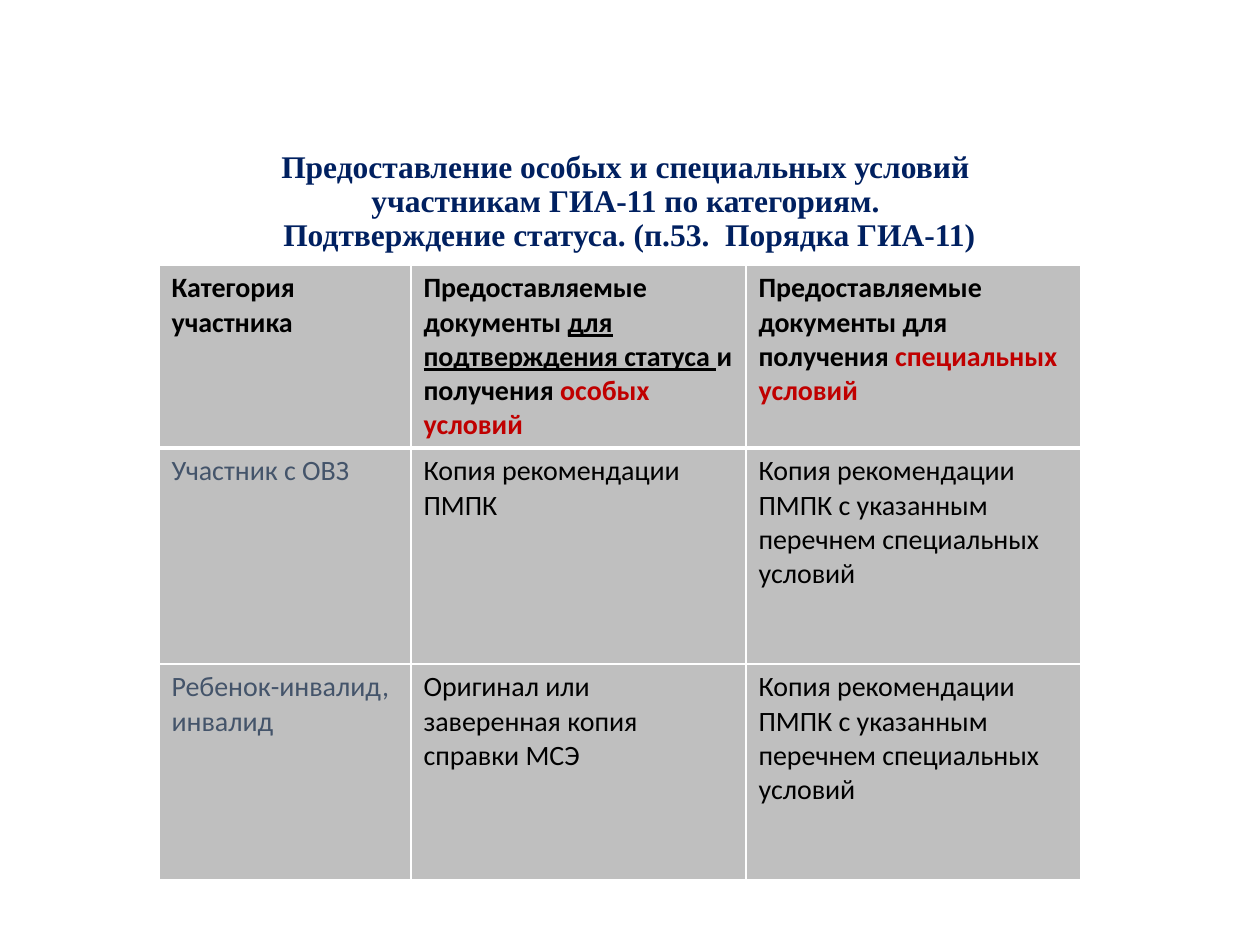
from lxml import etree
from pptx import Presentation
from pptx.dml.color import RGBColor
from pptx.enum.text import MSO_ANCHOR as ANCHOR, PP_ALIGN as ALIGN
from pptx.oxml.ns import qn
from pptx.util import Emu, Pt

PX_PER_INCH = 126
NAVY = RGBColor(0x00, 0x20, 0x60)
BLACK = RGBColor(0x00, 0x00, 0x00)
RED = RGBColor(0xC0, 0x00, 0x00)
SLATE = RGBColor(0x44, 0x54, 0x6A)
GRAY = RGBColor(0xBF, 0xBF, 0xBF)
WHITE = RGBColor(0xFF, 0xFF, 0xFF)


def px(n):
    return Emu(round(n * 914400 / PX_PER_INCH))


class SlideBuilder:
    title_font, title_size = "Times New Roman", Pt(18)
    body_font, body_size = "Calibri", Pt(16)

    def __init__(self, prs):
        self.s = prs.slides.add_slide(prs.slide_layouts[6])

    def format_run(self, r, name, size, color, bold=False, underline=False):
        r.font.name, r.font.size = name, size
        r.font.color.rgb = color
        r.font.bold, r.font.underline = bold, underline

    def title(self, x, y, w, h, text):
        tf = self.s.shapes.add_textbox(px(x), px(y), px(w), px(h)).text_frame
        tf.word_wrap = True
        tf.vertical_anchor = ANCHOR.TOP
        tf.margin_top = px(5)
        p = tf.paragraphs[0]
        p.text = text
        p.alignment = ALIGN.CENTER
        p.line_spacing = 0.9
        for r in p.runs:
            self.format_run(r, self.title_font, self.title_size, NAVY, bold=True)

    def borders(self, cell, bottom):
        tc_pr = cell._tc.get_or_add_tcPr()
        for side, width in (("L", 1), ("R", 1), ("T", 1), ("B", bottom)):
            ln = etree.SubElement(tc_pr, qn(f"a:ln{side}"), w=str(Pt(width)))
            fill = etree.SubElement(ln, qn("a:solidFill"))
            etree.SubElement(fill, qn("a:srgbClr"), val=str(WHITE))

    def cell(self, cell, parts, header):
        self.borders(cell, bottom=3 if header else 1)
        cell.fill.solid()
        cell.fill.fore_color.rgb = GRAY
        p = cell.text_frame.paragraphs[0]
        for text, color, underline in parts:
            r = p.add_run()
            r.text = text
            self.format_run(r, self.body_font, self.body_size, color, header, underline)

    def table(self, x, y, widths, heights, rows):
        table = self.s.shapes.add_table(
            len(heights), len(widths), px(x), px(y), px(sum(widths)), px(sum(heights))
        ).table
        for column, width in zip(table.columns, widths):
            column.width = px(width)
        for i, (height, row) in enumerate(zip(heights, rows)):
            table.rows[i].height = px(height)
            for j, parts in enumerate(row):
                self.cell(table.cell(i, j), parts, header=i == 0)


def plain(text, color=BLACK):
    return [(text, color, False)]


def main():
    prs = Presentation()
    prs.slide_width, prs.slide_height = px(1260), px(945)
    slide = SlideBuilder(prs)

    # Title
    slide.title(
        198, 146, 863, 146,
        "Предоставление особых и специальных условий \v"
        "участникам ГИА-11 по категориям. \v"
        "Подтверждение статуса. (п.53.  Порядка ГИА-11)",
    )

    # Documents required for each category
    special = plain("Копия рекомендации ПМПК с указанным перечнем специальных условий")
    rows = [
        [
            plain("Категория участника"),
            [
                ("Предоставляемые документы ", BLACK, False),
                ("для подтверждения статуса ", BLACK, True),
                ("и получения ", BLACK, False),
                ("особых условий", RED, False),
            ],
            plain("Предоставляемые документы для получения ")
            + plain("специальных условий", RED),
        ],
        [plain("Участник с ОВЗ", SLATE), plain("Копия рекомендации ПМПК"), special],
        [
            plain("Ребенок-инвалид, инвалид", SLATE),
            plain("Оригинал или заверенная копия справки МСЭ"),
            special,
        ],
    ]
    slide.table(159, 265, [252, 335, 335], [183, 216, 216], rows)

    prs.save("out.pptx")


if __name__ == "__main__":
    main()
